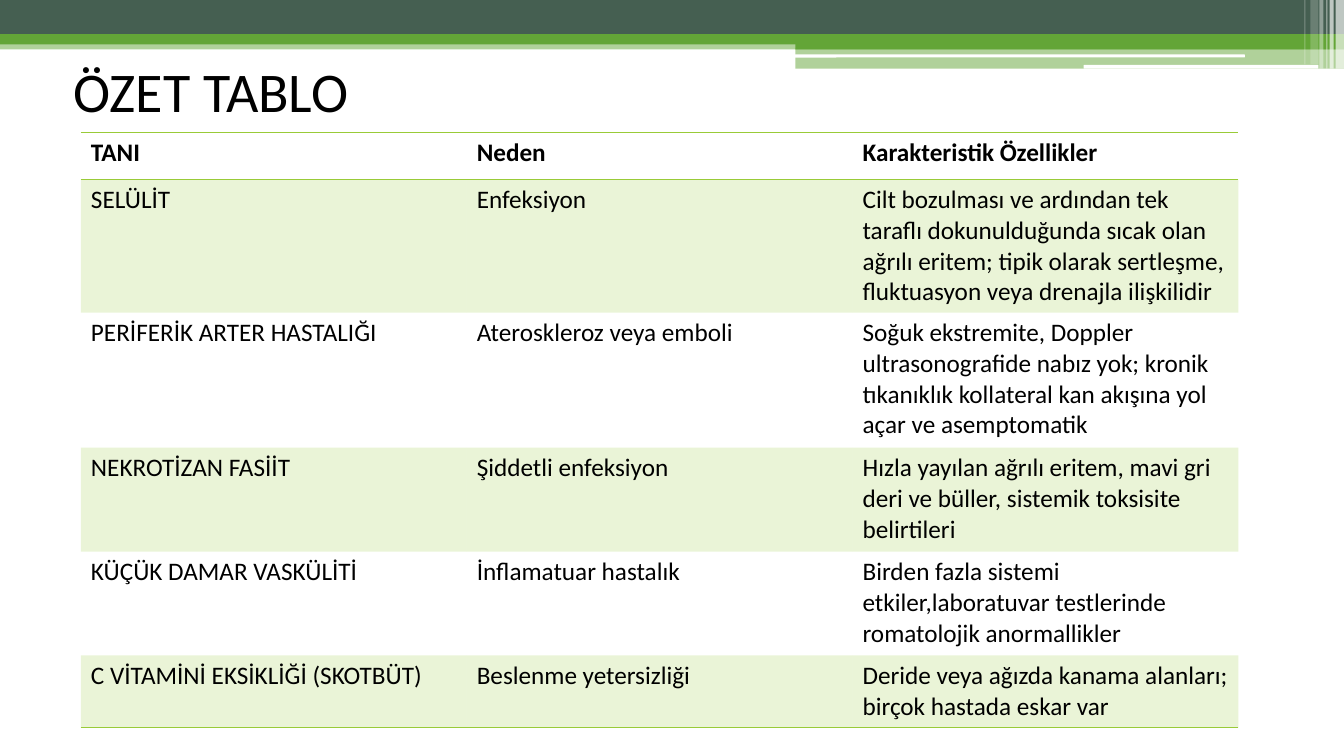
from lxml import etree
from pptx import Presentation
from pptx.dml.color import RGBColor
from pptx.enum.shapes import MSO_SHAPE as SHAPE
from pptx.enum.text import MSO_ANCHOR as ANCHOR, MSO_AUTO_SIZE as AUTO, PP_ALIGN as ALIGN
from pptx.oxml import parse_xml
from pptx.oxml.ns import nsdecls, qn
from pptx.util import Pt

SLATE = RGBColor(0x45, 0x5F, 0x51)
GREEN = RGBColor(0x63, 0xA5, 0x37)
LIME = RGBColor(0x99, 0xCB, 0x38)
WHITE = RGBColor(0xFF, 0xFF, 0xFF)
BLACK = RGBColor(0, 0, 0)
NO_STYLE = "{2D5ABB26-0587-4C30-8999-92F81FD0307C}"

BANDS = [
    (0, 28.8, 960, 6.5, GREEN, 50),
    (0, 0, 960, 24.5, SLATE, 100),
    (0, 24.5, 960, 7.2, GREEN, 100),
    (568.1, 28.1, 391.9, 7.2, GREEN, 100),
    (568.1, 34.6, 391.9, 14.4, GREEN, 50),
]
STRIPS = [(567.4, 38.9, 321.8, 2.2), (774, 46.4, 167.8, 2.6)]
GLINTS = [
    (954, 6, 49, 65),
    (949.7, 2.9, 49, 65),
    (947.5, 0.7, 49, 60),
    (942.5, 2.9, 49, 40),
    (936, 5.8, 46, 20),
    (931.7, 0.7, 46, 30),
]

ROWS = [
    ("TANI", "Neden", "Karakteristik Özellikler"),
    ("SELÜLİT", "Enfeksiyon",
     "Cilt bozulması ve ardından tek taraflı dokunulduğunda sıcak olan ağrılı eritem; "
     "tipik olarak sertleşme, fluktuasyon veya drenajla ilişkilidir"),
    ("PERİFERİK ARTER HASTALIĞI", "Ateroskleroz veya emboli",
     "Soğuk ekstremite, Doppler ultrasonografide nabız yok; kronik tıkanıklık "
     "kollateral kan akışına yol açar ve asemptomatik"),
    ("NEKROTİZAN FASİİT", "Şiddetli enfeksiyon",
     "Hızla yayılan ağrılı eritem, mavi gri deri ve büller, sistemik toksisite belirtileri"),
    ("KÜÇÜK DAMAR VASKÜLİTİ", "İnflamatuar hastalık",
     "Birden fazla sistemi etkiler,laboratuvar testlerinde romatolojik anormallikler"),
    ("C VİTAMİNİ EKSİKLİĞİ (SKOTBÜT)", "Beslenme yetersizliği",
     "Deride veya ağızda kanama alanları; birçok hastada eskar var"),
]
HEIGHTS = [33.8, 92.2, 96.5, 74.2, 74.2, 51.8]


class Deck:
    font = {"name": "Calibri"}

    def __init__(self, prs):
        self.slide = prs.slides.add_slide(prs.slide_layouts[5])

    def style(self, p, **fmt):
        for key, value in {**self.font, **fmt}.items():
            setattr(p.font, key, value)
        p.font.color.rgb = BLACK

    def paint(self, fill, color, alpha, parent):
        fill.solid()
        fill.fore_color.rgb = color
        if alpha < 100:
            clr = parent.find(qn("a:solidFill")).find(qn("a:srgbClr"))
            etree.SubElement(clr, qn("a:alpha")).set("val", str(alpha * 1000))

    def bar(self, x, y, w, h, color, alpha=100, kind=SHAPE.RECTANGLE):
        sp = self.slide.shapes.add_shape(kind, Pt(x), Pt(y), Pt(w), Pt(h))
        sp.shadow.inherit = False
        sp.line.fill.background()
        self.paint(sp.fill, color, alpha, sp.fill._xPr)

    def title(self, text, x, y, w, h):
        sp = self.slide.shapes.title
        box = {"left": x, "top": y, "width": w, "height": h}
        for key, value in box.items():
            setattr(sp, key, Pt(value))
        tf = sp.text_frame
        tf.text = text
        frame = {"word_wrap": True, "auto_size": AUTO.NONE, "vertical_anchor": ANCHOR.TOP}
        for key, value in frame.items():
            setattr(tf, key, value)
        p = tf.paragraphs[0]
        p.alignment = ALIGN.LEFT
        self.style(p, size=Pt(40))

    def border(self, cell, *sides):
        for side in sides:
            cell._tc.get_or_add_tcPr().append(parse_xml(
                f'<a:{side} {nsdecls("a")} w="{Pt(1)}"><a:solidFill>'
                f'<a:srgbClr val="{LIME}"/></a:solidFill></a:{side}>'))

    def table(self, rows, x, y, w, heights):
        frame = self.slide.shapes.add_table(
            len(rows), len(rows[0]), Pt(x), Pt(y), Pt(w), Pt(sum(heights)))
        table = frame.table
        table._tbl.tblPr.find(qn("a:tableStyleId")).text = NO_STYLE
        table.horz_banding = False
        for i, (texts, height) in enumerate(zip(rows, heights)):
            table.rows[i].height = Pt(height)
            for j, text in enumerate(texts):
                cell = table.cell(i, j)
                cell.text = text
                self.style(cell.text_frame.paragraphs[0], size=Pt(18), bold=i == 0)
                if i == 0:
                    self.border(cell, "lnT", "lnB")
                elif i == len(rows) - 1:
                    self.border(cell, "lnB")
                if i % 2:
                    self.paint(cell.fill, LIME, 20, cell._tc.tcPr)
                else:
                    cell.fill.background()


def main():
    prs = Presentation()
    prs.slide_width, prs.slide_height = Pt(960), Pt(540)
    deck = Deck(prs)
    for band in BANDS:
        deck.bar(*band)
    for strip in STRIPS:
        deck.bar(*strip, WHITE, kind=SHAPE.ROUNDED_RECTANGLE)
    for x, w, h, alpha in GLINTS:
        deck.bar(x, 0, w, h, WHITE, alpha)
    deck.table(ROWS, 57.8, 94.4, 826.8, HEIGHTS)
    deck.title("ÖZET TABLO", 45.4, 36.7, 270, 77.8)
    prs.save("out.pptx")


if __name__ == "__main__":
    main()
